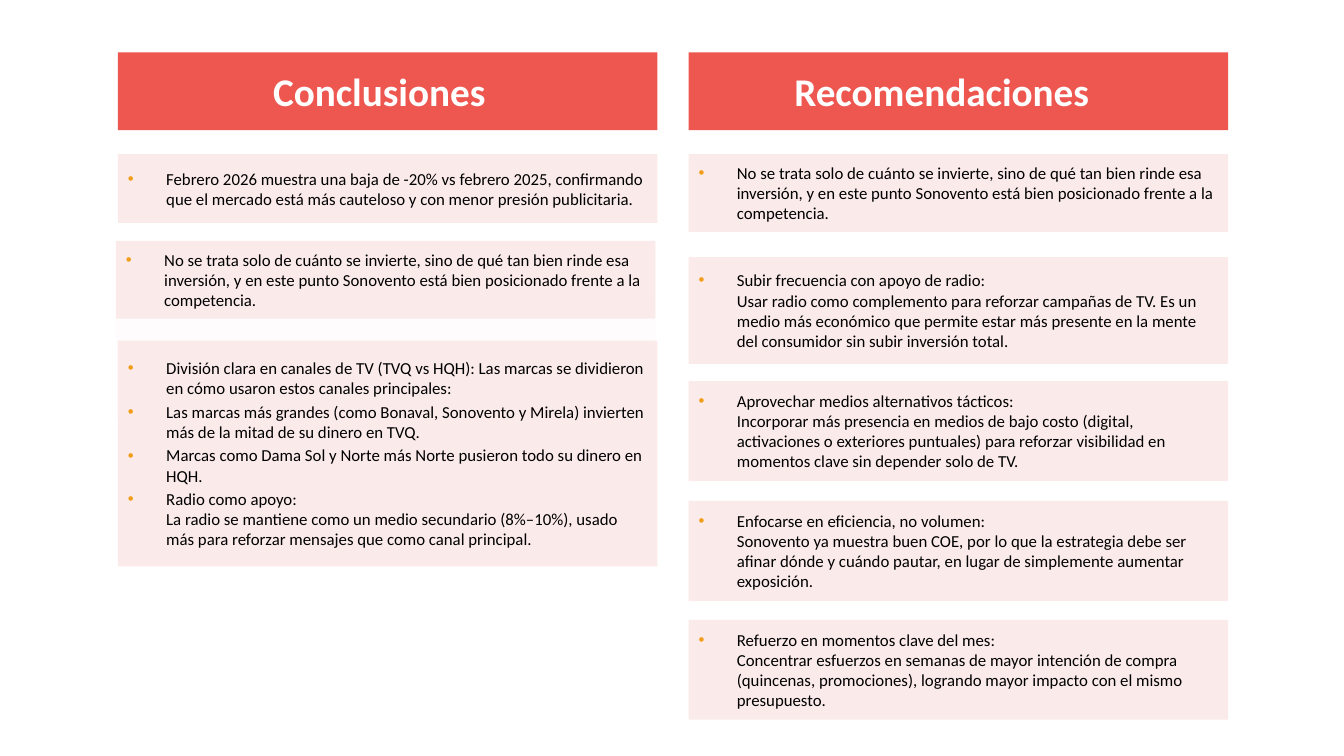
from dataclasses import dataclass

from lxml import etree
from pptx import Presentation
from pptx.dml.color import RGBColor
from pptx.enum.shapes import MSO_SHAPE
from pptx.enum.text import MSO_ANCHOR, MSO_AUTO_SIZE, PP_ALIGN
from pptx.oxml.ns import qn
from pptx.util import Pt

PANEL = MSO_SHAPE.ROUNDED_RECTANGLE
MIDDLE = MSO_ANCHOR.MIDDLE
GROW = MSO_AUTO_SIZE.SHAPE_TO_FIT_TEXT
LEFT = PP_ALIGN.LEFT
PX = 9144


@dataclass(frozen=True)
class Theme:
    font: str = "Calibri"
    heading_size: int = 28
    body_size: int = 12
    gap: float = 2.4
    coral: str = "EE5750"
    blush: str = "FBEAEA"
    amber: str = "F19D19"
    white: str = "FFFFFF"
    black: str = "000000"


theme = Theme()
COLUMN_WIDTH = 535
HEADER_TOP, HEADER_HEIGHT = 52, 77
HANGING = 38

efficiency = (
    "No se trata solo de cuánto se invierte, sino de qué tan bien rinde esa inversión, "
    "y en este punto Sonovento está bien posicionado frente a la competencia."
)
headings = [
    ("Conclusiones", 117, 261, 245),
    ("Recomendaciones", 683, 778, 330),
]
findings = [
    (117, 153, 68, [
        "Febrero 2026 muestra una baja de -20% vs febrero 2025, confirmando que el mercado "
        "está más cauteloso y con menor presión publicitaria.",
    ]),
    (115, 239, 77, [efficiency]),
    (117, 338, 224, [
        "División clara en canales de TV (TVQ vs HQH): Las marcas se dividieron en cómo "
        "usaron estos canales principales:",
        "Las marcas más grandes (como Bonaval, Sonovento y Mirela) invierten más de la mitad "
        "de su dinero en TVQ.",
        "Marcas como Dama Sol y Norte más Norte pusieron todo su dinero en HQH.",
        "Radio como apoyo:\vLa radio se mantiene como un medio secundario (8%–10%), usado más "
        "para reforzar mensajes que como canal principal.",
    ]),
    (683, 153, 77, [efficiency]),
    (683, 255, 106, [
        "Subir frecuencia con apoyo de radio:\vUsar radio como complemento para reforzar "
        "campañas de TV. Es un medio más económico que permite estar más presente en la mente "
        "del consumidor sin subir inversión total.",
    ]),
    (683, 378, 99, [
        "Aprovechar medios alternativos tácticos:\vIncorporar más presencia en medios de bajo "
        "costo (digital, activaciones o exteriores puntuales) para reforzar visibilidad en "
        "momentos clave sin depender solo de TV.",
    ]),
    (683, 497, 99, [
        "Enfocarse en eficiencia, no volumen:\vSonovento ya muestra buen COE, por lo que la "
        "estrategia debe ser afinar dónde y cuándo pautar, en lugar de simplemente aumentar "
        "exposición.",
    ]),
    (683, 615, 99, [
        "Refuerzo en momentos clave del mes:\vConcentrar esfuerzos en semanas de mayor "
        "intención de compra (quincenas, promociones), logrando mayor impacto con el mismo "
        "presupuesto.",
    ]),
]

deck = Presentation()
deck.slide_width = 1333 * PX
deck.slide_height = 750 * PX
slide = deck.slides.add_slide(deck.slide_layouts[6])


def add_panel(left, top, height, color):
    panel = slide.shapes.add_shape(
        PANEL, left * PX, top * PX, COLUMN_WIDTH * PX, height * PX
    )
    panel.adjustments[0] = 0
    panel.shadow.inherit = False
    panel.fill.solid()
    panel.fill.fore_color.rgb = RGBColor.from_string(color)
    panel.line.fill.background()
    return panel


def style_text(paragraph, size, color, bold=False):
    paragraph.alignment = LEFT
    for run in paragraph.runs:
        run.font.name = theme.font
        run.font.size = Pt(size)
        run.font.bold = bold
        run.font.color.rgb = RGBColor.from_string(color)


veil = add_panel(115, 293, 123, theme.blush)
veil_color = veil.fill._xPr.find(qn("a:solidFill")).find(qn("a:srgbClr"))
etree.SubElement(veil_color, qn("a:alpha"), val="10000")

for heading, left, title_left, title_width in headings:
    add_panel(left, HEADER_TOP, HEADER_HEIGHT, theme.coral)
    title = slide.shapes.add_textbox(title_left * PX, 62 * PX, title_width * PX, 57 * PX)
    title.text_frame.text = heading
    title.text_frame.word_wrap = False
    title.text_frame.auto_size = GROW
    style_text(title.text_frame.paragraphs[0], theme.heading_size, theme.white, True)

for left, top, height, points in findings:
    frame = add_panel(left, top, height, theme.blush).text_frame
    frame.text = "\n".join(points)
    frame.word_wrap = True
    frame.vertical_anchor = MIDDLE
    for index, paragraph in enumerate(frame.paragraphs):
        properties = paragraph._p.get_or_add_pPr()
        properties.set("marL", str(HANGING * PX))
        properties.set("indent", str(-HANGING * PX))
        bullet_color = etree.SubElement(properties, qn("a:buClr"))
        etree.SubElement(bullet_color, qn("a:srgbClr"), val=theme.amber)
        etree.SubElement(properties, qn("a:buFont"), typeface="Arial")
        etree.SubElement(properties, qn("a:buChar"), char="•")
        if index:
            paragraph.space_before = Pt(theme.gap)
        style_text(paragraph, theme.body_size, theme.black)

deck.save("out.pptx")
